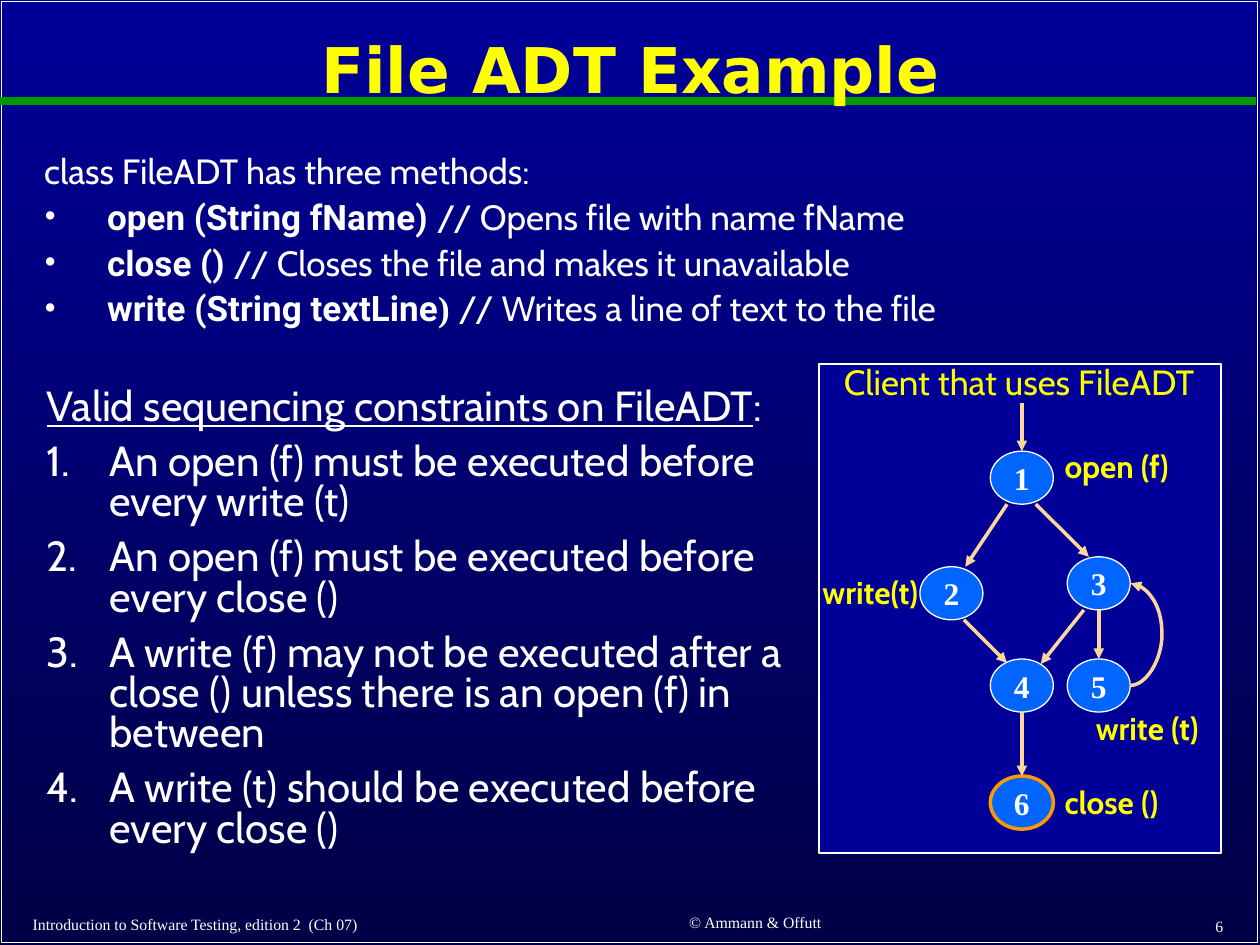
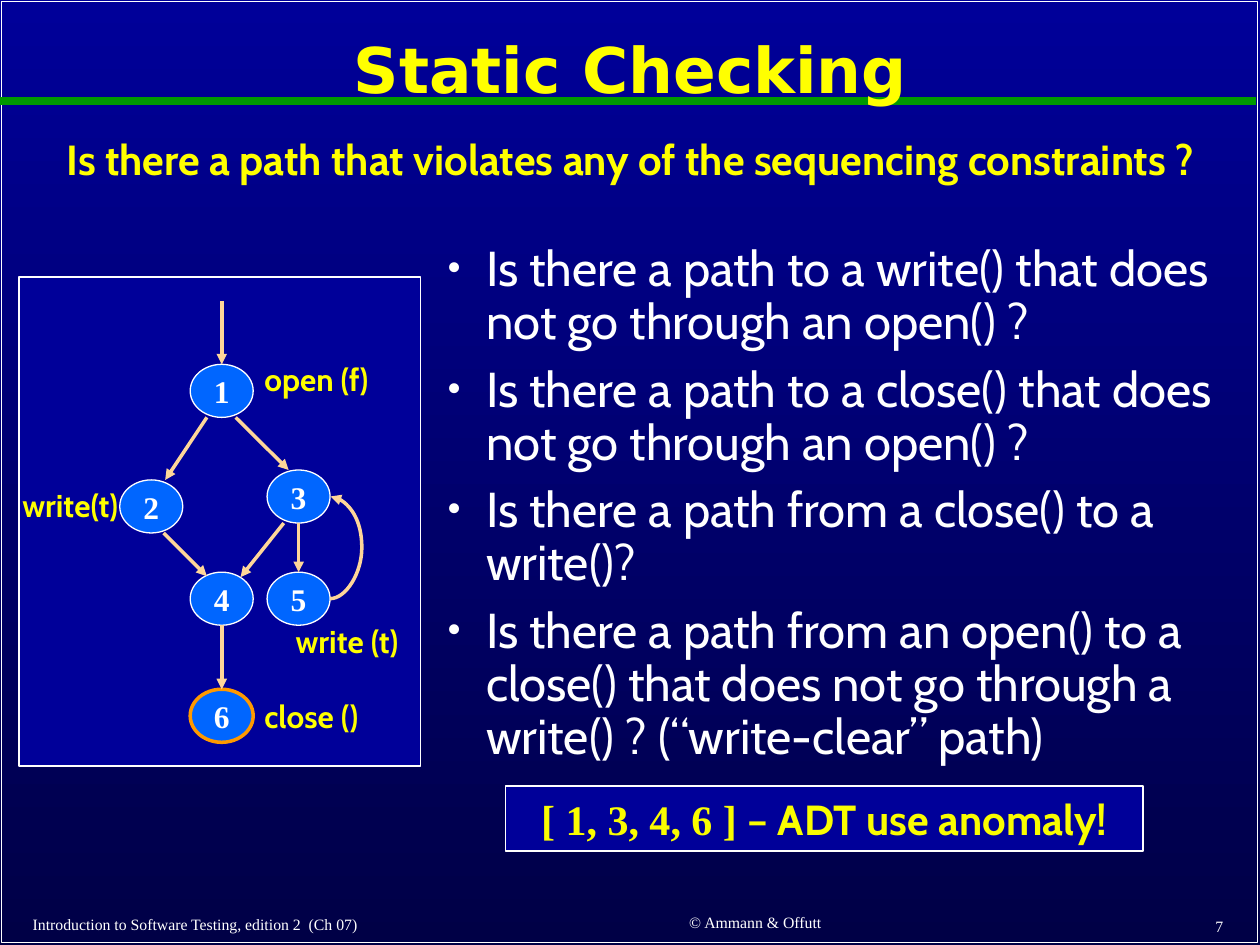
from lxml.etree import SubElement
from pptx import Presentation
from pptx.dml.color import RGBColor
from pptx.enum.shapes import MSO_CONNECTOR, MSO_SHAPE
from pptx.enum.text import MSO_ANCHOR, PP_ALIGN
from pptx.oxml.ns import qn
from pptx.util import Cm, Pt

WHITE, YELLOW, GOLD = "FFFFFF", "FFFF00", "FAFD00"
NAVY, MIDNIGHT, GREEN = "000099", "000046", "009900"
NODE_BLUE, ORANGE, PEACH = "0066FF", "FF9900", "FED699"
SANS, SERIF, CODE, TITLE = "Cabin", "Times New Roman", "Roboto", "DejaVu Sans"

# Flow graph, in cm from the corner of its panel
PANEL_SIZE = (8.1, 9.86)
NODE_WIDTH, NODE_HEIGHT = 1.27, 1.07
NODES = {1: (4.09, 2.29), 2: (2.67, 4.62), 3: (5.64, 4.42),
         4: (4.09, 6.48), 5: (5.64, 6.48), 6: (4.09, 8.84)}
# start, end, shift at start, shift at end, drop below the top of the end node
EDGES = [(1, 2, -0.3, 0.28, 0), (1, 3, 0.28, -0.2, 0), (2, 4, 0.25, -0.3, 0.08),
         (3, 4, -0.3, 0.38, 0.1), (3, 5, 0, 0, 0), (4, 6, 0, 0, 0)]
CALLS = [("open (f)", 4.7, 1.55), ("write(t)", -0.18, 4.09),
         ("write (t)", 5.33, 6.83), ("close ()", 4.7, 8.33)]
LOOP_BULGE, LOOP_WIDTH = 0.64, 0.01
ELLIPSE_RIGHT = 6


def rgb(color):
    return RGBColor.from_string(color)


# Text
def add_span(para, text, size=18, font=SANS, color=WHITE, bold=False, underline=False):
    span = para.add_run()
    span.text = text
    span.font.size = Pt(size)
    span.font.name = font
    span.font.color.rgb = rgb(color)
    span.font.bold = bold
    span.font.underline = underline


def add_text_box(page, box, anchor=MSO_ANCHOR.TOP, wrap=True):
    frame = page.shapes.add_textbox(*map(Cm, box)).text_frame
    frame.word_wrap = wrap
    frame.vertical_anchor = anchor
    return frame


def add_line_of_text(page, box, text, align=PP_ALIGN.LEFT, anchor=MSO_ANCHOR.TOP,
                     wrap=True, spacing=1.0, **style):
    para = add_text_box(page, box, anchor, wrap).paragraphs[0]
    para.alignment = align
    para.line_spacing = spacing
    add_span(para, text, **style)


def set_bullet(para, kind, indent, percent):
    properties = para._p.get_or_add_pPr()
    properties.set("marL", str(Cm(indent)))
    properties.set("indent", str(-Cm(indent)))
    if kind == "none":
        SubElement(properties, qn("a:buNone"))
        return
    SubElement(properties, qn("a:buSzPct")).set("val", str(percent * 1000))
    if kind == "number":
        SubElement(properties, qn("a:buFont")).set("typeface", SANS)
        SubElement(properties, qn("a:buAutoNum")).set("type", "arabicPeriod")
    else:
        SubElement(properties, qn("a:buFont")).set("typeface", SERIF)
        SubElement(properties, qn("a:buChar")).set("char", "•")


def add_list(page, box, rows, size, spacing, gap, indent=1.27, percent=100):
    """Each row is a bullet kind and its spans; gap is a share of the text size."""
    frame = add_text_box(page, box)
    for index, (kind, spans) in enumerate(rows):
        para = frame.add_paragraph() if index else frame.paragraphs[0]
        para.line_spacing = spacing
        para.space_before = Pt(size * gap if index else 0)
        set_bullet(para, kind, indent, percent)
        for text, style in spans:
            add_span(para, text, size=size, **style)


# Shapes and lines
def add_outline(page, preset, box, fill=None, line=WHITE, width=1):
    shape = page.shapes.add_shape(preset, *map(Cm, box))
    shape.shadow.inherit = False
    if fill:
        shape.fill.solid()
        shape.fill.fore_color.rgb = rgb(fill)
    else:
        shape.fill.background()
    shape.line.color.rgb = rgb(line)
    shape.line.width = Pt(width)
    return shape


def add_line(page, start, end, color=PEACH, width=2, arrow=True,
             kind=MSO_CONNECTOR.STRAIGHT):
    line = page.shapes.add_connector(kind, *map(Cm, start + end))
    line.line.color.rgb = rgb(color)
    line.line.width = Pt(width)
    if arrow:
        SubElement(line.line._get_or_add_ln(), qn("a:tailEnd")).set("type", "triangle")
    SubElement(line._element.spPr, qn("a:effectLst"))
    return line


# Page frame shared by both slides
def add_page(deck, title, number):
    page = deck.slides.add_slide(deck.slide_layouts[6])
    fill = page.background.fill
    fill.gradient()
    fill.gradient_angle = 270
    for stop, color in zip(fill.gradient_stops, (NAVY, MIDNIGHT)):
        stop.color.rgb = rgb(color)

    add_outline(page, MSO_SHAPE.RECTANGLE, (0.03, 0.03, 25.32, 18.97))
    add_line(page, (0, 2.03), (25.32, 2.03), GREEN, 4.5, arrow=False)
    add_line_of_text(page, (0.38, 0.28, 24.66, 2.39), title, PP_ALIGN.CENTER,
                     MSO_ANCHOR.MIDDLE, spacing=0.9, size=36, font=TITLE,
                     color=YELLOW, bold=True)
    footers = [
        ((0.41, 18.34, 10.39, 0.58), "Introduction to Software Testing, edition 2  (Ch 07)",
         PP_ALIGN.LEFT),
        ((11.2, 18.31, 8.05, 0.58), "© Ammann & Offutt", PP_ALIGN.CENTER),
        ((19.63, 18.36, 5.28, 0.61), str(number), PP_ALIGN.RIGHT),
    ]
    for box, text, align in footers:
        add_line_of_text(page, box, text, align, MSO_ANCHOR.MIDDLE, size=9, font=SERIF)
    return page


# Flow graph
def add_node(page, number, center_x, center_y):
    final = number == max(NODES)
    box = (center_x - NODE_WIDTH / 2, center_y - NODE_HEIGHT / 2, NODE_WIDTH, NODE_HEIGHT)
    node = add_outline(page, MSO_SHAPE.OVAL, box, NODE_BLUE,
                       ORANGE if final else WHITE, 2 if final else 0.75)
    frame = node.text_frame
    frame.margin_left = frame.margin_right = frame.margin_top = frame.margin_bottom = 0
    frame.vertical_anchor = MSO_ANCHOR.MIDDLE
    frame.paragraphs[0].alignment = PP_ALIGN.CENTER
    add_span(frame.paragraphs[0], str(number), font=SERIF, bold=True)
    return node


def add_loop(page, start_node, end_node, start, end):
    """Curve that leaves and enters on the right-hand sides of two nodes."""
    loop = add_line(page, start, end, kind=MSO_CONNECTOR.CURVE)
    ends = loop._element.nvCxnSpPr.cNvCxnSpPr
    for tag, node in (("a:stCxn", start_node), ("a:endCxn", end_node)):
        link = SubElement(ends, qn(tag))
        link.set("id", str(node.shape_id))
        link.set("idx", str(ELLIPSE_RIGHT))
    guide = SubElement(loop._element.spPr.prstGeom.get_or_add_avLst(), qn("a:gd"))
    guide.set("name", "adj1")
    guide.set("fmla", f"val {round(LOOP_BULGE / LOOP_WIDTH * 100000)}")


def add_flow_graph(page, left, top, entry):
    add_outline(page, MSO_SHAPE.RECTANGLE, (left, top, *PANEL_SIZE), NAVY)
    centers = {number: (left + x, top + y) for number, (x, y) in NODES.items()}
    nodes = {number: add_node(page, number, *center) for number, center in centers.items()}
    half_width, half_height = NODE_WIDTH / 2, NODE_HEIGHT / 2

    # Edges, with the entry arrow first
    first_x, first_y = centers[1]
    add_line(page, (first_x, top + entry), (first_x, first_y - half_height))
    for start, end, start_shift, end_shift, drop in EDGES:
        (start_x, start_y), (end_x, end_y) = centers[start], centers[end]
        add_line(page, (start_x + start_shift, start_y + half_height),
                 (end_x + end_shift, end_y - half_height + drop))
    (start_x, start_y), (end_x, end_y) = centers[5], centers[3]
    add_loop(page, nodes[5], nodes[3], (start_x + half_width, start_y),
             (end_x + half_width + LOOP_WIDTH, end_y))

    # Method calls beside the nodes
    for text, x, y in CALLS:
        add_line_of_text(page, (left + x, top + y, 2.97, 1.02), text,
                         color=YELLOW, bold=True)


# Slides
def add_example_page(deck):
    page = add_page(deck, "File ADT Example", 6)
    code = {"font": CODE, "bold": True}
    methods = [
        ("none", [("class FileADT has three methods:", {})]),
        ("dot", [("open (String fName) ", code), ("// Opens file with name fName", {})]),
        ("dot", [("close () ", code), ("// Closes the file and makes it unavailable", {})]),
        ("dot", [("write (String textLine", code), (") ", {"font": SERIF, "bold": True}),
                 ("// Writes a line of text to the file", {})]),
    ]
    add_list(page, (0.64, 3.05, 20.32, 3.86), methods, 20, 0.8, 0.35)

    constraints = [
        "An open (f) must be executed before every write (t)",
        "An open (f) must be executed before every close ()",
        "A write (f) may not be executed after a close () unless there is an open (f) in between",
        "A write (t) should be executed before every close ()",
    ]
    heading = [("Valid sequencing constraints on FileADT", {"underline": True}), (":", {})]
    rows = [("none", heading)] + [("number", [(text, {})]) for text in constraints]
    add_list(page, (0.69, 7.72, 15.82, 9.91), rows, 24, 0.8, 0.35)

    add_flow_graph(page, 16.51, 7.34, entry=0.79)
    add_line_of_text(page, (16.76, 7.14, 7.65, 1.12), "Client that uses FileADT",
                     wrap=False, size=20, color=GOLD)


def add_checking_page(deck):
    page = add_page(deck, "Static Checking", 7)
    add_line_of_text(page, (0.99, 2.69, 23.44, 2.11),
                     "Is there a path that violates any of the sequencing constraints ?",
                     PP_ALIGN.CENTER, spacing=0.9, size=24, color=YELLOW, bold=True)
    questions = [
        "Is there a path to a write() that does not go through an open() ?",
        "Is there a path to a close() that does not go through an open() ?",
        "Is there a path from a close() to a write()?",
        "Is there a path from an open() to a close() that does not go through a write() ? "
        "(“write-clear” path)",
    ]
    add_list(page, (8.76, 4.8, 16.36, 8.61), [("dot", [(text, {})]) for text in questions],
             28, 0.9, 0.3, indent=0.79, percent=85)
    add_flow_graph(page, 0.38, 5.59, entry=0.48)

    # Finding
    finding = add_outline(page, MSO_SHAPE.RECTANGLE, (10.19, 15.85, 12.85, 1.3), NAVY)
    para = finding.text_frame.paragraphs[0]
    para.alignment = PP_ALIGN.CENTER
    add_span(para, "[ 1, 3, 4, 6 ] ", size=24, font=SERIF, color=GOLD, bold=True)
    add_span(para, "– ADT use anomaly!", size=24, color=GOLD, bold=True)


def main():
    deck = Presentation()
    deck.slide_width, deck.slide_height = Cm(25.4), Cm(19.05)
    add_example_page(deck)
    add_checking_page(deck)
    deck.save("out.pptx")


if __name__ == "__main__":
    main()
